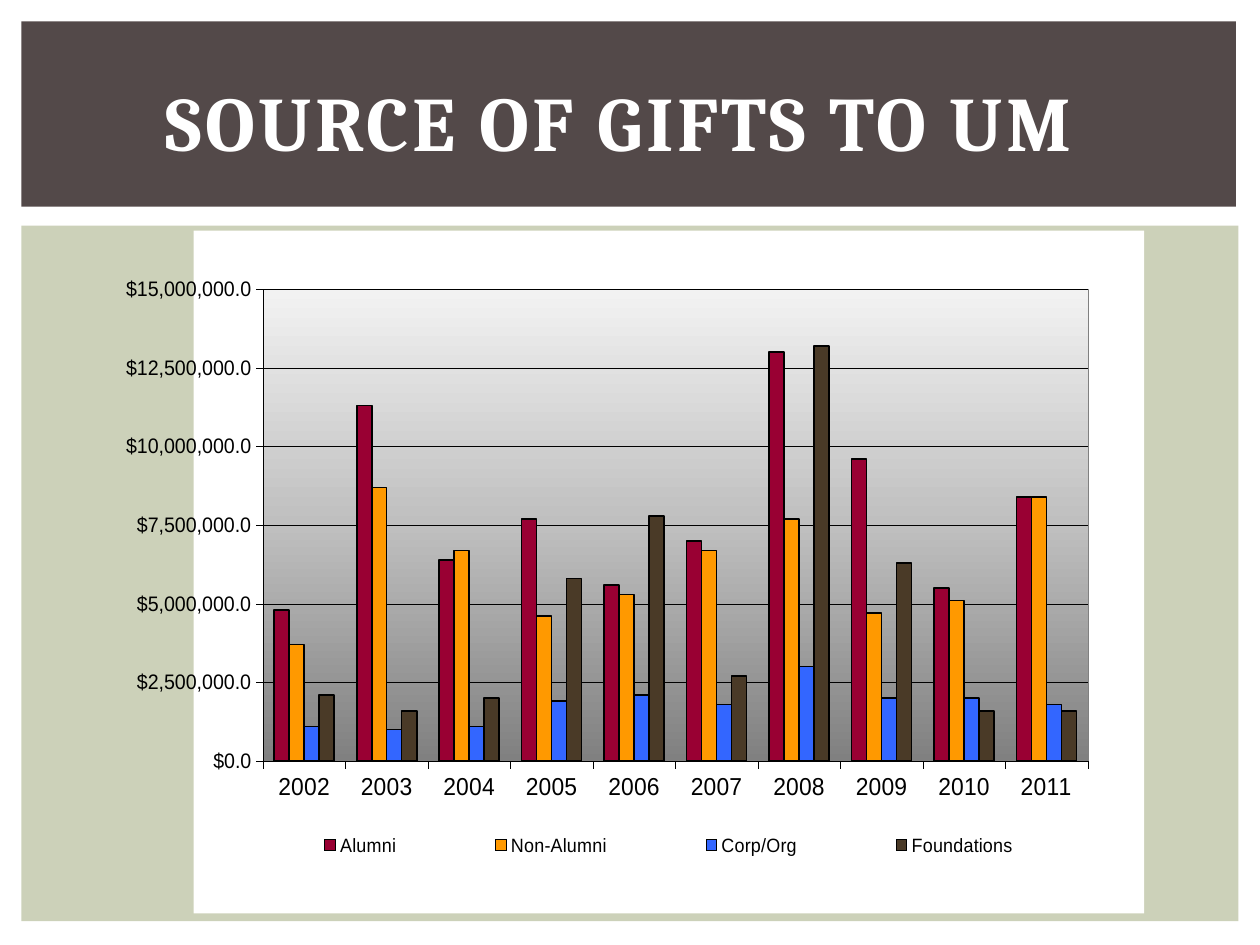
import pptx
import pptx.chart.data
import pptx.dml.color
import pptx.enum.chart
import pptx.enum.shapes
import pptx.enum.text
import pptx.oxml
import pptx.oxml.ns
import pptx.util

Inches = pptx.util.Inches
Pt = pptx.util.Pt
NAMESPACES = pptx.oxml.ns.nsdecls("c", "a")


def color(hex_value):
    return pptx.dml.color.RGBColor.from_string(hex_value)


def set_layout(element, before, x, y, width, height, inner=False):
    """Place a chart part by fractions of the chart size."""
    for old in element.findall(pptx.oxml.ns.qn("c:layout")):
        element.remove(old)
    target = '<c:layoutTarget val="inner"/>' if inner else ""
    layout = pptx.oxml.parse_xml(
        f'<c:layout {NAMESPACES}><c:manualLayout>{target}'
        '<c:xMode val="edge"/><c:yMode val="edge"/>'
        f'<c:x val="{x}"/><c:y val="{y}"/><c:w val="{width}"/><c:h val="{height}"/>'
        '</c:manualLayout></c:layout>')
    element.insert(before, layout)


presentation = pptx.Presentation()
presentation.slide_width = Inches(10)
presentation.slide_height = Inches(7.5)
slide = presentation.slides.add_slide(presentation.slide_layouts[5])

# Background panels
for panel_color, left, top, width, height in (
    ("CCD1B9", 0.17, 1.79, 9.66, 5.52),
    ("534949", 0.17, 0.17, 9.64, 1.47),
):
    panel = slide.shapes.add_shape(
        pptx.enum.shapes.MSO_SHAPE.RECTANGLE,
        Inches(left), Inches(top), Inches(width), Inches(height))
    panel.shadow.inherit = False
    panel.fill.solid()
    panel.fill.fore_color.rgb = color(panel_color)
    panel.line.fill.background()

# Title, in front of the panels
title = slide.shapes.title
slide.shapes._spTree.append(title._element)
title_place = {"left": 0.5, "top": 0.5, "width": 9, "height": 0.92}
for name, value in title_place.items():
    setattr(title, name, Inches(value))
title.text_frame.vertical_anchor = pptx.enum.text.MSO_ANCHOR.MIDDLE
paragraph = title.text_frame.paragraphs[0]
paragraph.alignment = pptx.enum.text.PP_ALIGN.CENTER
run = paragraph.add_run()
run.text = "SOURCE OF GIFTS TO UM "
for name, value in {"name": "Cambria", "size": Pt(44), "bold": True}.items():
    setattr(run.font, name, value)
run.font.color.rgb = color("FFFFFF")
run._r.get_or_add_rPr().set("spc", "200")

# Gift data in millions of dollars, with the colour of each source
gifts = {
    "Alumni": ("990033", (4.8, 11.3, 6.4, 7.7, 5.6, 7.0, 13.0, 9.6, 5.5, 8.4)),
    "Non-Alumni": ("FF9900", (3.7, 8.7, 6.7, 4.6, 5.3, 6.7, 7.7, 4.7, 5.1, 8.4)),
    "Corp/Org": ("3366FF", (1.1, 1.0, 1.1, 1.9, 2.1, 1.8, 3.0, 2.0, 2.0, 1.8)),
    "Foundations": ("4A3A27", (2.1, 1.6, 2.0, 5.8, 7.8, 2.7, 13.2, 6.3, 1.6, 1.6)),
}
chart_data = pptx.chart.data.CategoryChartData()
chart_data.categories = [str(year) for year in range(2002, 2012)]
for source, (_, millions) in gifts.items():
    chart_data.add_series(source, [round(value * 1_000_000) for value in millions])

# Column chart
chart = slide.shapes.add_chart(
    pptx.enum.chart.XL_CHART_TYPE.COLUMN_CLUSTERED,
    Inches(1), Inches(1.83), Inches(8.08), Inches(5.42), chart_data).chart
chart.has_title = False
chart.has_legend = True
plot = chart.plots[0]
for name, value in {"gap_width": 150, "overlap": 0, "vary_by_categories": False}.items():
    setattr(plot, name, value)
for series, (series_color, _) in zip(plot.series, gifts.values()):
    series.format.fill.solid()
    series.format.fill.fore_color.rgb = color(series_color)
    series.format.line.width = Pt(1)
    series.format.line.color.rgb = color("000000")

# Axes and gridlines
value_axis = chart.value_axis
value_format = {
    "minimum_scale": 0,
    "maximum_scale": 15_000_000,
    "major_unit": 2_500_000,
    "has_major_gridlines": True,
}
for name, value in value_format.items():
    setattr(value_axis, name, value)
value_axis.tick_labels.number_format = r"\$#,##0.0"
value_axis.tick_labels.number_format_is_linked = False
for axis in (value_axis, chart.category_axis):
    axis.major_tick_mark = pptx.enum.chart.XL_TICK_MARK.OUTSIDE
    axis.minor_tick_mark = pptx.enum.chart.XL_TICK_MARK.NONE
for part in (value_axis, chart.category_axis, value_axis.major_gridlines):
    part.format.line.width = Pt(0.25)
    part.format.line.color.rgb = color("000000")

# Legend and chart fonts
legend = chart.legend
legend.position = pptx.enum.chart.XL_LEGEND_POSITION.RIGHT
legend.include_in_layout = False
for font, size in (
    (chart.font, 12),
    (value_axis.tick_labels.font, 12),
    (chart.category_axis.tick_labels.font, 14),
    (legend.font, 11),
):
    for name, value in {"name": "Arial", "size": Pt(size), "bold": False}.items():
        setattr(font, name, value)
    font.color.rgb = color("000000")

# Positions of the plot and the legend inside the chart
plot_area = chart._chartSpace.chart.plotArea
set_layout(plot_area, 0, 0.073, 0.086, 0.868, 0.691, inner=True)
set_layout(legend._element, 1, 0.04, 0.85, 0.92, 0.1)

# Plot gradient and white chart background
stops = "".join(
    f'<a:gs pos="{percent * 1000}"><a:srgbClr val="{stop_color}"/></a:gs>'
    for percent, stop_color in ((0, "F2F2F2"), (50, "BFBFBF"), (100, "808080")))
plot_area.append(pptx.oxml.parse_xml(
    f'<c:spPr {NAMESPACES}><a:gradFill><a:gsLst>{stops}</a:gsLst>'
    '<a:lin ang="5400000" scaled="0"/></a:gradFill>'
    '<a:ln w="3175"><a:solidFill><a:srgbClr val="808080"/></a:solidFill></a:ln></c:spPr>'))
chart._chartSpace.chart.addnext(pptx.oxml.parse_xml(
    f'<c:spPr {NAMESPACES}><a:solidFill><a:srgbClr val="FFFFFF"/></a:solidFill>'
    '<a:ln><a:noFill/></a:ln></c:spPr>'))

presentation.save("out.pptx")
